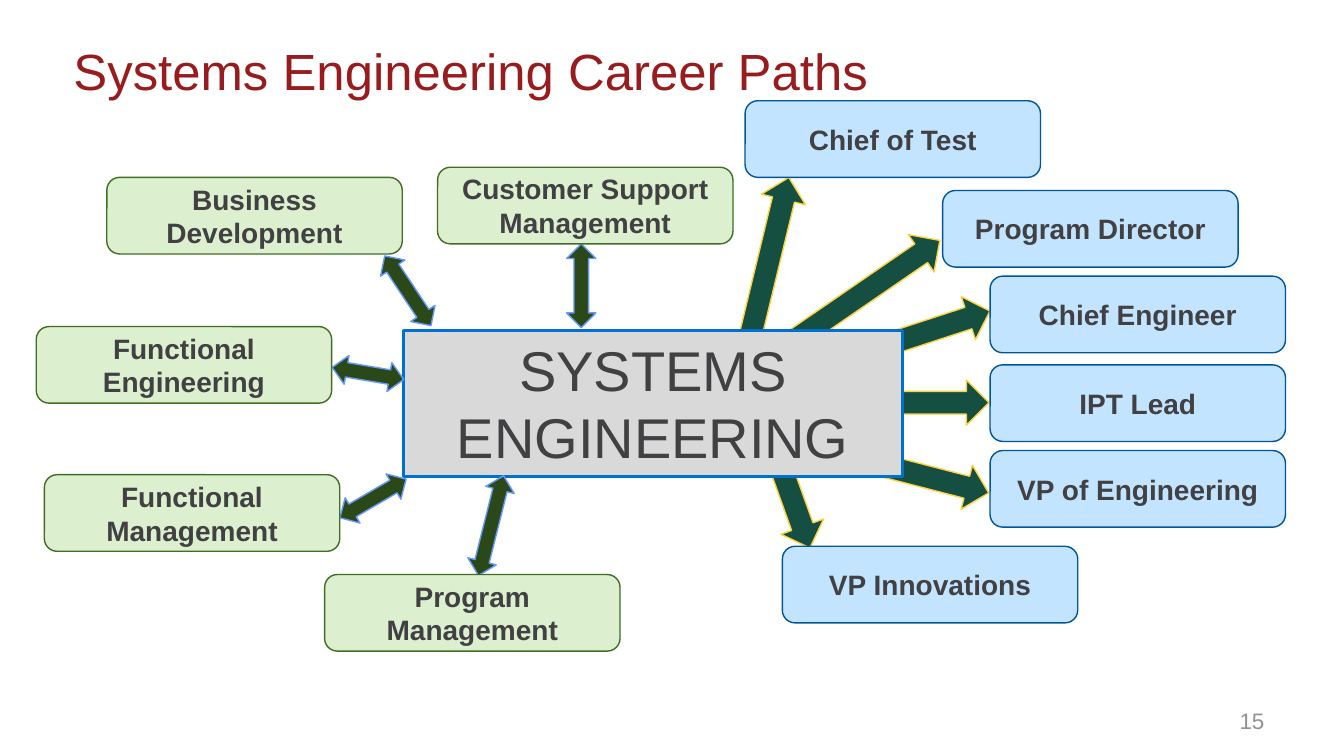
from pptx import Presentation
from pptx.dml.color import RGBColor
from pptx.enum import shapes, text
from pptx.util import Inches, Pt

KIND = shapes.MSO_SHAPE
ALIGN = text.PP_ALIGN
ANCHOR = text.MSO_ANCHOR
LABEL = (2.93, 0.76)

GREEN = {
    "arrow": KIND.LEFT_RIGHT_ARROW, "thick": 0.29,
    "shaft": ("2B4818", "6699FF"), "box": ("DCEFCF", "416D24"),
}
BLUE = {
    "arrow": KIND.RIGHT_ARROW, "thick": 0.45,
    "shaft": ("154F41", "FFD13F"), "box": ("C2E4FF", "00559B"),
}

# Label, its offset in the region, then arrow offset, length and angle
PEERS = [
    ("Customer Support Management", (3.98, 0), (4.99, 1.03), 0.83, 90),
    ("Business Development", (0.7, 0.1), (3.27, 1.08), 0.83, 56.4),
    ("Program Management", (2.86, 4.04), (4, 3.41), 1.02, 104.1),
    ("Functional Engineering", (0, 1.58), (2.93, 1.9), 0.72, 9.6),
    ("Functional Management", (0.08, 3.05), (2.96, 3.14), 0.76, 329.7),
]
LEADS = [
    ("Chief of Test", (0.69, 0), (0, 1.42), 1.82, 283.6),
    ("Program Director", (2.65, 0.89), (0.98, 1.67), 1.8, 325.5),
    ("Chief Engineer", (3.12, 1.74), (1.87, 2.06), 1.28, 341.9),
    ("IPT Lead", (3.12, 2.62), (1.78, 2.77), 1.33, 0),
    ("VP of Engineering", (3.12, 3.47), (1.65, 3.48), 1.48, 14.5),
    ("VP Innovations", (1.06, 4.42), (0.11, 3.35), 1.83, 70.3),
]


def color(code):
    return RGBColor.from_string(code)


def write(shape, words, size, code, align, anchor, bold=False):
    frame = shape.text_frame
    frame.word_wrap = True
    frame.vertical_anchor = anchor
    para = frame.paragraphs[0]
    para.text = words
    para.alignment = align
    style = {"name": "Arial", "size": Pt(size), "bold": bold}
    for key, value in style.items():
        setattr(para.font, key, value)
    para.font.color.rgb = color(code)
    return frame


def draw(slide, kind, box, colors, width=1, angle=0):
    shape = slide.shapes.add_shape(kind, *map(Inches, box))
    fill, line = colors
    shape.shadow.inherit = False
    shape.fill.solid()
    shape.fill.fore_color.rgb = color(fill)
    shape.line.color.rgb = color(line)
    shape.line.width = Pt(width)
    shape.rotation = angle
    return shape


def paths(slide, left, top, rows, theme):
    """Draw each career label with the arrow that ties it to the hub."""
    for words, (x, y), (ax, ay), length, angle in rows:
        draw(slide, theme["arrow"], (left + ax, top + ay, length, theme["thick"]),
             theme["shaft"], angle=angle)
        label = draw(slide, KIND.ROUNDED_RECTANGLE, (left + x, top + y, *LABEL),
                     theme["box"])
        write(label, words, 20, "414042", ALIGN.CENTER, ANCHOR.MIDDLE, True)


def hub(slide, box):
    shape = draw(slide, KIND.RECTANGLE, box, ("D9D9D9", "0071CE"), 2)
    write(shape, "SYSTEMS ENGINEERING", 40, "414042", ALIGN.CENTER, ANCHOR.TOP)


def title(slide, box):
    shape = slide.shapes.add_textbox(*map(Inches, box))
    write(shape, "Systems Engineering Career Paths", 36.3, "981B1E",
          ALIGN.LEFT, ANCHOR.TOP)


def number(slide, box):
    shape = slide.shapes.add_textbox(*map(Inches, box))
    frame = write(shape, "15", 16, "939393", ALIGN.RIGHT, ANCHOR.MIDDLE)
    for side, gap in {"left": 0.13, "top": 0.07, "right": 0.13, "bottom": 0.07}.items():
        setattr(frame, "margin_" + side, Inches(gap))


def main():
    deck = Presentation()
    deck.slide_width, deck.slide_height = Inches(13.33), Inches(7.5)
    slide = deck.slides.add_slide(deck.slide_layouts[6])
    number(slide, (9.56, 6.95, 3.11, 0.4))
    title(slide, (0.63, 0.34, 9.68, 0.58))
    paths(slide, 6.7, 1, LEADS, BLUE)
    hub(slide, (4, 3.28, 4.95, 1.45))
    paths(slide, 0.36, 1.66, PEERS, GREEN)
    deck.save("out.pptx")


if __name__ == "__main__":
    main()
